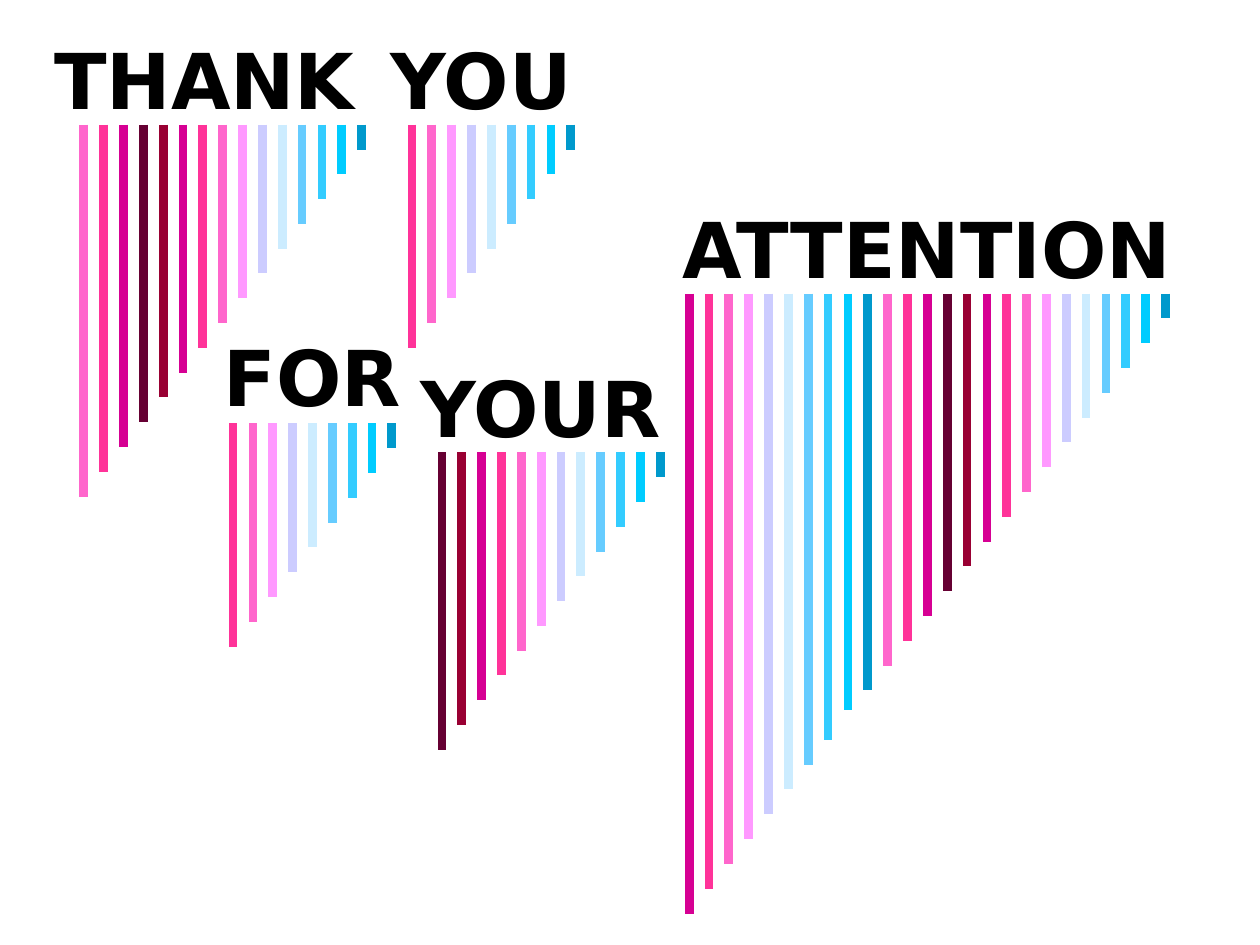
import dataclasses

import lxml.etree
import pptx
import pptx.dml.color
import pptx.enum.shapes
import pptx.enum.text
import pptx.oxml.ns
import pptx.util

Inches = pptx.util.Inches
Pt = pptx.util.Pt


@dataclasses.dataclass(frozen=True)
class Theme:
    font: str = "DejaVu Sans"
    word_size: float = 44
    word_color: str = "000000"
    outline_color: str = "054697"
    outline_width: float = 1
    stripe_width: float = 5
    accent_width: float = 5.25
    accent_index: int = 12
    # Stripe colours from the shortest to the longest, then repeating
    stripe_colors: tuple = (
        "0099CC", "00CCFF", "33CCFF", "66CCFF", "CCECFF",
        "CCCCFF", "FF99FF", "FF66CC", "FF3399", "D60093",
        "990033", "660033", "D60093", "FF3399", "FF66CC",
    )


THEME = Theme()
STRIPE_GAP = 0.63 / 4
STRIPE_STEP = 4.92 / 25
WORD_HEIGHT = 0.84

# word, left, top, width, rightmost stripe, stripe top, stripe count, trims
WORDS = (
    ("THANK ", 0, 0.21, 3.46, 2.87, 0.99, 15, {}),
    ("YOU", 2.01, 0.21, 3.62, 4.53, 0.99, 9, {}),
    ("FOR", 0.75, 2.57, 3.46, 3.11, 3.36, 9, {}),
    ("YOUR", 2.56, 2.81, 3.46, 5.24, 3.59, 12, {}),
    ("ATTENTION", 5, 1.55, 4.72, 9.25, 2.33, 25, {16: 0.04}),
)


def rgb(color):
    return pptx.dml.color.RGBColor.from_string(color)


def outline_text(run, color, width):
    """Give the letters a coloured outline."""
    tag = pptx.oxml.ns.qn
    outline = lxml.etree.Element(tag("a:ln"), w=str(Pt(width)))
    fill = lxml.etree.SubElement(outline, tag("a:solidFill"))
    lxml.etree.SubElement(fill, tag("a:srgbClr"), val=color)
    run.font._element.insert(0, outline)


def add_text(slide, text, *, left, top, width, height, size, color,
             bold=True, align=pptx.enum.text.PP_ALIGN.CENTER):
    box = slide.shapes.add_textbox(
        Inches(left), Inches(top), Inches(width), Inches(height))
    frame = box.text_frame
    frame.word_wrap = True
    frame.auto_size = pptx.enum.text.MSO_AUTO_SIZE.SHAPE_TO_FIT_TEXT
    paragraph = frame.paragraphs[0]
    paragraph.alignment = align
    run = paragraph.add_run()
    run.text = text
    run.font.name = THEME.font
    run.font.size = Pt(size)
    run.font.bold = bold
    run.font.color.rgb = rgb(color)
    outline_text(run, THEME.outline_color, THEME.outline_width)


def add_stripe(slide, x, top, bottom, color, width):
    stripe = slide.shapes.add_connector(
        pptx.enum.shapes.MSO_CONNECTOR.STRAIGHT,
        Inches(x), Inches(top), Inches(x), Inches(bottom))
    stripe.line.color.rgb = rgb(color)
    stripe.line.width = Pt(width)
    lxml.etree.SubElement(
        stripe._element.spPr, pptx.oxml.ns.qn("a:effectLst"))


def add_stripes(slide, right, top, count, trims):
    """Hang stripes under a word, each longer than the one to its right."""
    for index in range(count):
        place = index % len(THEME.stripe_colors)
        accent = index == THEME.accent_index
        length = (index + 1) * STRIPE_STEP - trims.get(index, 0)
        add_stripe(slide, right - index * STRIPE_GAP, top, top + length,
                   THEME.stripe_colors[place],
                   THEME.accent_width if accent else THEME.stripe_width)


def main():
    deck = pptx.Presentation()
    deck.slide_width, deck.slide_height = Inches(10), Inches(7.5)
    slide = deck.slides.add_slide(deck.slide_layouts[6])

    # Each word with its stripes
    for word, left, top, width, right, stripe_top, count, trims in WORDS:
        add_text(slide, word, left=left, top=top, width=width,
                 height=WORD_HEIGHT, size=THEME.word_size,
                 color=THEME.word_color)
        add_stripes(slide, right, stripe_top, count, trims)

    deck.save("out.pptx")


if __name__ == "__main__":
    main()
